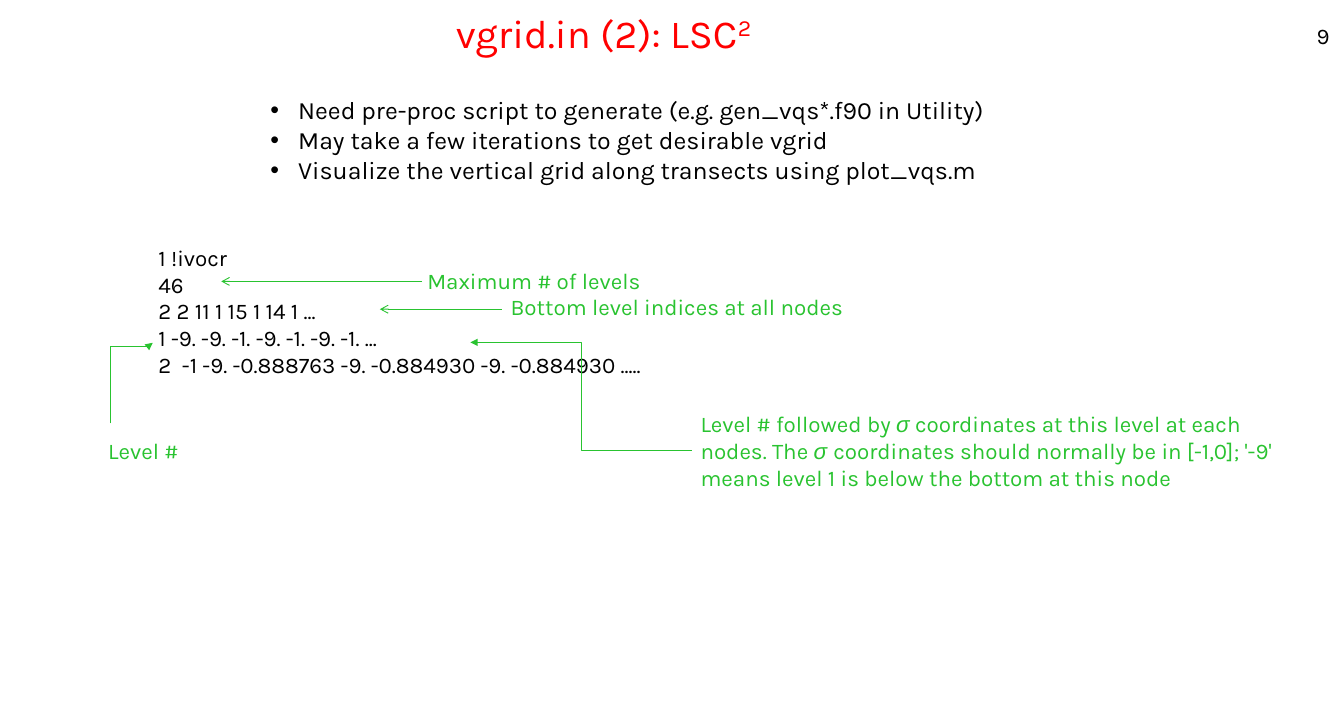
from dataclasses import dataclass

import lxml.etree
import pptx
import pptx.dml.color
import pptx.enum.shapes
import pptx.enum.text
import pptx.oxml.ns
import pptx.util

Inches = pptx.util.Inches
Align = pptx.enum.text.PP_ALIGN
Anchor = pptx.enum.text.MSO_ANCHOR
Kind = pptx.enum.shapes.MSO_CONNECTOR
qn = pptx.oxml.ns.qn


@dataclass(frozen=True)
class Theme:
    font: str = "Karla"
    greek: str = "Arial"
    black: str = "000000"
    red: str = "FF0000"
    green: str = "29C330"
    title: int = 32
    list: int = 20
    body: int = 18
    line: float = 0.75


THEME = Theme()


@dataclass(frozen=True)
class Run:
    text: str
    greek: bool = False
    raised: bool = False


@dataclass(frozen=True)
class Box:
    area: tuple[float, float, float, float]
    lines: list[list[Run]]
    size: int = THEME.body
    color: str = THEME.black
    align: Align = Align.LEFT
    head: bool = False
    wrap: bool = True
    bullet: str = ""


@dataclass(frozen=True)
class Arrow:
    start: tuple[float, float]
    end: tuple[float, float]
    kind: Kind = Kind.STRAIGHT
    tip: str = "arrow"
    turn: int = 0
    bend: float = 0.5


@dataclass(frozen=True)
class Note:
    box: Box
    arrow: Arrow


def plain(*texts: str) -> list[list[Run]]:
    """One single-run paragraph for each text."""
    return [[Run(text)] for text in texts]


def label(area: tuple[float, float, float, float], *runs: Run, wrap: bool = True) -> Box:
    """A green one-paragraph label."""
    return Box(area, [list(runs)], color=THEME.green, wrap=wrap)


def add_run(para, run: Run, box: Box) -> None:
    item = para.add_run()
    item.text = run.text
    font = item.font
    font.name = THEME.greek if run.greek else THEME.font
    font.size = pptx.util.Pt(box.size)
    font.italic = run.greek
    font.color.rgb = pptx.dml.color.RGBColor.from_string(box.color)
    if run.raised:
        font._element.set("baseline", "30000")


def add_bullet(para, mark: str) -> None:
    props = para._p.get_or_add_pPr()
    props.set("marL", str(Inches(0.31)))
    props.set("indent", str(Inches(-0.31)))
    lxml.etree.SubElement(props, qn("a:buFont")).set("typeface", "Arial")
    lxml.etree.SubElement(props, qn("a:buChar")).set("char", mark)


def add_box(shapes, box: Box) -> None:
    frame = shapes.add_textbox(*map(Inches, box.area)).text_frame
    frame.word_wrap = box.wrap
    if box.head:
        frame.vertical_anchor = Anchor.BOTTOM
        frame.margin_left = frame.margin_right = Inches(0.13)
        frame.margin_top = frame.margin_bottom = Inches(0.07)
    else:
        frame.auto_size = pptx.enum.text.MSO_AUTO_SIZE.SHAPE_TO_FIT_TEXT
    for i, line in enumerate(box.lines):
        para = frame.add_paragraph() if i else frame.paragraphs[0]
        para.alignment = box.align
        if box.bullet:
            add_bullet(para, box.bullet)
        for run in line:
            add_run(para, run, box)


def add_arrow(shapes, arrow: Arrow) -> None:
    link = shapes.add_connector(arrow.kind, *map(Inches, arrow.start + arrow.end))
    link.line.width = pptx.util.Pt(THEME.line)
    link.line.color.rgb = pptx.dml.color.RGBColor.from_string(THEME.green)
    props = link._element.spPr
    lxml.etree.SubElement(props.find(qn("a:ln")), qn("a:tailEnd")).set("type", arrow.tip)
    lxml.etree.SubElement(props, qn("a:effectLst"))
    if arrow.turn:
        props.find(qn("a:xfrm")).set("rot", str(arrow.turn * 60000))
    if arrow.kind == Kind.ELBOW:
        guide = lxml.etree.SubElement(props.find(qn("a:prstGeom")).find(qn("a:avLst")), qn("a:gd"))
        guide.set("name", "adj1")
        guide.set("fmla", f"val {round(arrow.bend * 100000)}")


def add_note(shapes, note: Note) -> None:
    group = shapes.add_group_shape()
    add_box(group.shapes, note.box)
    add_arrow(group.shapes, note.arrow)


# Page number, title, file listing and advice
BOXES = [
    Box((13.97, 0.09, 1, 0.53), plain("9"), align=Align.RIGHT, head=True),
    Box((4.5, 0.17, 4.47, 0.53), [[Run("vgrid.in (2): LSC"), Run("2", raised=True)]],
        THEME.title, THEME.red, Align.CENTER, head=True),
    Box((1.67, 2.67, 5.67, 1.92), plain(
        "1 !ivocr",
        "46",
        "2 2 11 1 15 1 14 1 ...",
        "1 -9. -9. -1. -9. -1. -9. -1. ...",
        "2  -1 -9. -0.888763 -9. -0.884930 -9. -0.884930 .....")),
    Box((2.92, 1.01, 8.3, 1.11), plain(
        "Need pre-proc script to generate (e.g. gen_vqs*.f90 in Utility)",
        "May take a few iterations to get desirable vgrid",
        "Visualize the vertical grid along transects using plot_vqs.m"),
        THEME.list, wrap=False, bullet="•"),
]

# Green labels, each with the arrow to its line of the listing
NOTES = [
    Note(label((4.67, 2.93, 2.65, 0.69), Run("Maximum # of levels")),
         Arrow((4.71, 3.14), (2.47, 3.14))),
    Note(label((5.6, 3.22, 4.25, 0.4), Run("Bottom level indices at all nodes")),
         Arrow((5.6, 3.45), (4.24, 3.45))),
    Note(label((7.72, 4.53, 7, 1.01),
               Run("Level # followed by "), Run("σ", greek=True),
               Run(" coordinates at this level at each nodes. The "), Run("σ ", greek=True),
               Run("coordinates should normally be in [-1,0]; '-9' "
                   "means level 1 is below the bottom at this node")),
         Arrow((7.72, 5.03), (5.25, 3.82), Kind.ELBOW, "triangle")),
    # Ends are given before the quarter turn
    Note(label((1.11, 4.83, 1.04, 0.4), Run("Level #"), wrap=False),
         Arrow((1.92, 4.51), (1.02, 4.04), Kind.ELBOW, "triangle", turn=90, bend=0.96)),
]


def main() -> None:
    deck = pptx.Presentation()
    deck.slide_width, deck.slide_height = Inches(15), Inches(8)
    slide = deck.slides.add_slide(deck.slide_layouts[6])
    for box in BOXES:
        add_box(slide.shapes, box)
    for note in NOTES:
        add_note(slide.shapes, note)
    deck.save("out.pptx")


if __name__ == "__main__":
    main()
